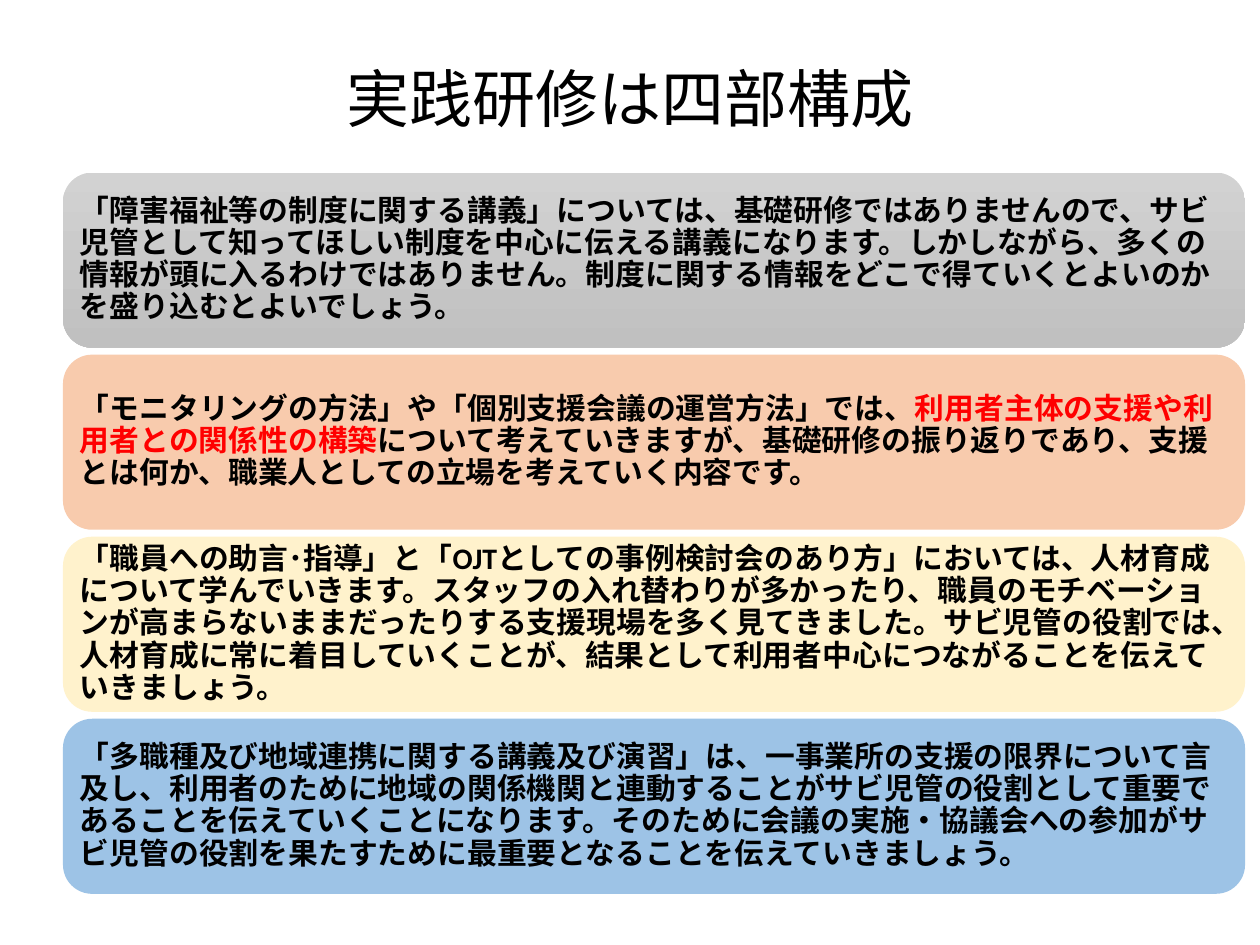
from dataclasses import dataclass

from pptx import Presentation
from pptx.dml.color import RGBColor
from pptx.enum.shapes import MSO_SHAPE
from pptx.enum.text import MSO_ANCHOR, MSO_AUTO_SIZE, PP_ALIGN
from pptx.util import Cm, Pt


@dataclass(frozen=True)
class Theme:
    font: str = "Calibri"
    title_size: float = 36
    body_size: float = 17
    line_spacing: float = 0.9
    text: str = "000000"
    accent: str = "FF0000"
    gray: tuple = ("D2D2D2", "C0C0C0")
    orange: tuple = ("F8CBAD",)
    yellow: tuple = ("FFF2CC",)
    blue: tuple = ("9DC3E6",)


THEME = Theme()

# Stack of panels, in centimetres
LEFT, TOP = 1.27, 3.48
WIDTH, HEIGHT, GAP = 23.83, 3.53, 0.14
INSET = 0.17

# Each panel: fill colours, then runs of (text, colour)
PANELS = [
    (THEME.gray, [
        ("「障害福祉等の制度に関する講義」については、基礎研修ではありませんので、"
         "サビ児管として知ってほしい制度を中心に伝える講義になります。"
         "しかしながら、多くの情報が頭に入るわけではありません。"
         "制度に関する情報をどこで得ていくとよいのかを盛り込むとよいでしょう。", THEME.text),
    ]),
    (THEME.orange, [
        ("「モニタリングの方法」や「個別支援会議の運営方法」では、", THEME.text),
        ("利用者主体の支援や利用者との関係性の構築", THEME.accent),
        ("について考えていきますが、基礎研修の振り返りであり、"
         "支援とは何か、職業人としての立場を考えていく内容です。", THEME.text),
    ]),
    (THEME.yellow, [
        ("「職員への助言･指導」と「OJTとしての事例検討会のあり方」においては、"
         "人材育成について学んでいきます。スタッフの入れ替わりが多かったり、"
         "職員のモチベーションが高まらないままだったりする支援現場を多く見てきました。"
         "サビ児管の役割では、人材育成に常に着目していくことが、"
         "結果として利用者中心につながることを伝えていきましょう。", THEME.text),
    ]),
    (THEME.blue, [
        ("「多職種及び地域連携に関する講義及び演習」は、"
         "一事業所の支援の限界について言及し、利用者のために地域の関係機関と"
         "連動することがサビ児管の役割として重要であることを伝えていくことになります。"
         "そのために会議の実施・協議会への参加がサビ児管の役割を果たすために"
         "最重要となることを伝えていきましょう。", THEME.text),
    ]),
]


def format_paragraph(para, size, alignment, bold):
    para.alignment = alignment
    para.line_spacing = THEME.line_spacing
    para.font.name = THEME.font
    para.font.size = Pt(size)
    para.font.bold = bold


def set_title(slide, text):
    title = slide.shapes.title
    title.left, title.top = Cm(1.27), Cm(1.24)
    title.width, title.height = Cm(22.86), Cm(1.63)
    frame = title.text_frame
    frame.text = text
    frame.auto_size = MSO_AUTO_SIZE.NONE
    frame.vertical_anchor = MSO_ANCHOR.MIDDLE
    para = frame.paragraphs[0]
    format_paragraph(para, THEME.title_size, PP_ALIGN.CENTER, False)
    para.font.color.rgb = RGBColor.from_string(THEME.text)


def fill_panel(panel, colors):
    if len(colors) == 1:
        panel.fill.solid()
        panel.fill.fore_color.rgb = RGBColor.from_string(colors[0])
        return
    # Vertical gradient, first colour at the top
    panel.fill.gradient()
    panel.fill.gradient_angle = 270
    for stop, color in zip(panel.fill.gradient_stops, colors):
        stop.color.rgb = RGBColor.from_string(color)


def add_panel(slide, top, colors, runs):
    panel = slide.shapes.add_shape(
        MSO_SHAPE.ROUNDED_RECTANGLE, Cm(LEFT), Cm(top), Cm(WIDTH), Cm(HEIGHT))
    panel.shadow.inherit = False
    panel.line.fill.background()
    fill_panel(panel, colors)

    frame = panel.text_frame
    frame.word_wrap = True
    frame.vertical_anchor = MSO_ANCHOR.MIDDLE
    frame.margin_left = frame.margin_right = Cm(INSET)
    frame.margin_top = frame.margin_bottom = Cm(INSET)
    para = frame.paragraphs[0]
    format_paragraph(para, THEME.body_size, PP_ALIGN.LEFT, True)
    for text, color in runs:
        span = para.add_run()
        span.text = text
        span.font.color.rgb = RGBColor.from_string(color)


def main():
    deck = Presentation()
    deck.slide_width, deck.slide_height = Cm(25.4), Cm(19.05)
    slide = deck.slides.add_slide(deck.slide_layouts.get_by_name("Title Only"))

    # Title
    set_title(slide, "実践研修は四部構成")

    # Four parts of the training, stacked at equal gaps
    for index, (colors, runs) in enumerate(PANELS):
        add_panel(slide, TOP + index * (HEIGHT + GAP), colors, runs)

    deck.save("out.pptx")


if __name__ == "__main__":
    main()
